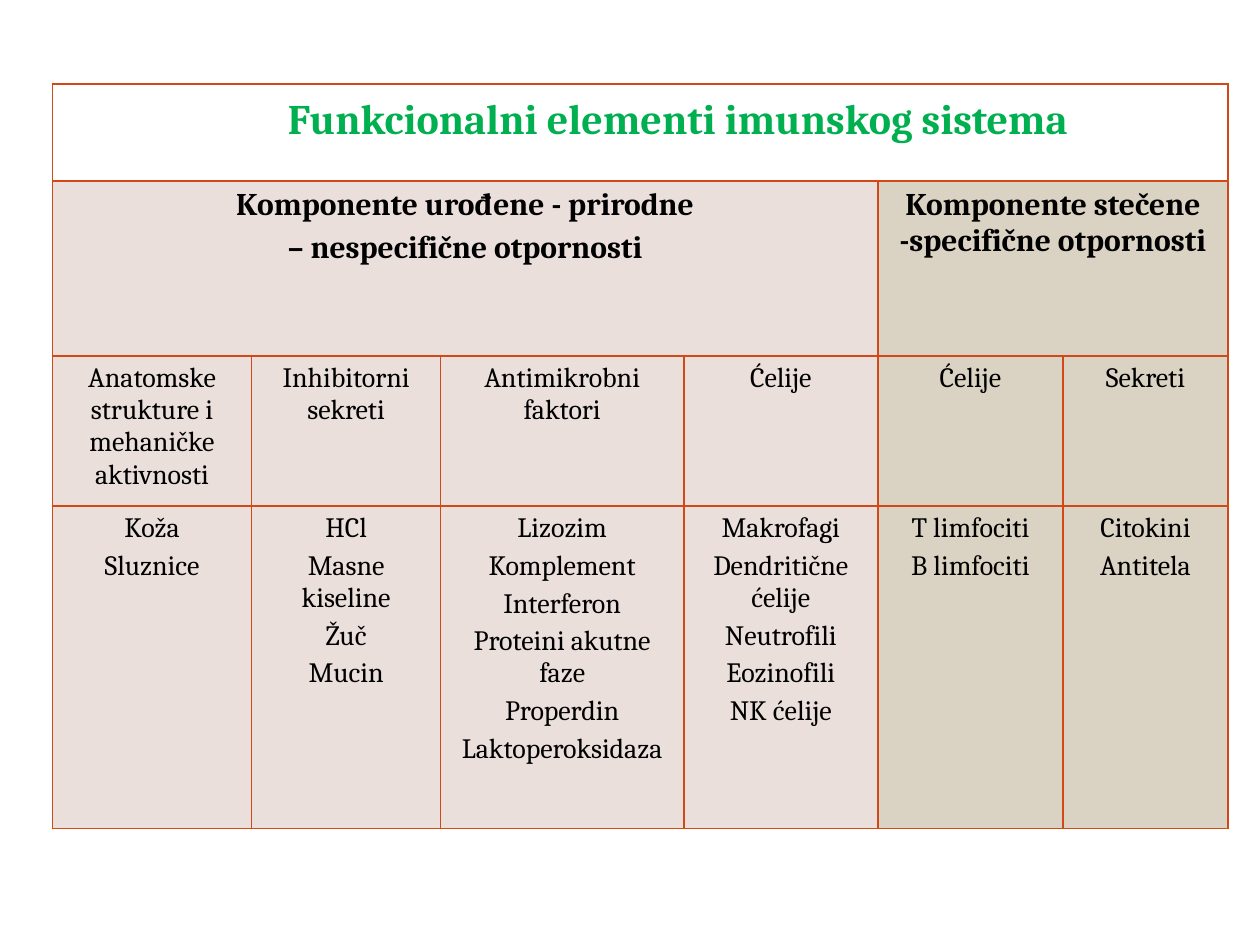
"""Build a slide with a table of the functional elements of the immune system."""
from lxml import etree
from pptx import Presentation
from pptx.dml.color import RGBColor
from pptx.enum import text
from pptx.oxml import ns
from pptx.util import Pt

THEME = {
    "font": "Cambria",
    "title": "00B050", "ink": "000000", "border": "D34817",
    "paper": "FFFFFF", "innate": "EBDFDB", "acquired": "DAD2C3",
    "title_size": 24, "group_size": 18, "body_size": 16,
    "border_width": 1, "spacing": 0.2,
}

TITLE = "Funkcionalni elementi imunskog sistema"
GROUPS = [
    ("innate", ["Komponente urođene - prirodne", "– nespecifične otpornosti"], [
        ("Anatomske strukture i mehaničke aktivnosti", ["Koža", "Sluznice"]),
        ("Inhibitorni sekreti", ["HCl", "Masne kiseline", "Žuč", "Mucin"]),
        ("Antimikrobni faktori", ["Lizozim", "Komplement", "Interferon",
                                  "Proteini akutne faze", "Properdin",
                                  "Laktoperoksidaza"]),
        ("Ćelije", ["Makrofagi", "Dendritične ćelije", "Neutrofili",
                    "Eozinofili", "NK ćelije"]),
    ]),
    ("acquired", ["Komponente stečene -specifične otpornosti"], [
        ("Ćelije", ["T limfociti", "B limfociti"]),
        ("Sekreti", ["Citokini", "Antitela"]),
    ]),
]

LEFT, TOP = 30, 48
COLUMNS = [113.8, 108, 139, 110.9, 105.8, 94.3]
ROWS = [55.4, 100.1, 85.7, 184.3]
TITLE_INDENT, TITLE_TOP = 50, 7.4


def add_borders(cell):
    """Draw the same line on all four sides of a cell."""
    props = cell._tc.get_or_add_tcPr()
    for i, side in enumerate(("a:lnL", "a:lnR", "a:lnT", "a:lnB")):
        line = etree.Element(ns.qn(side), w=str(Pt(THEME["border_width"])))
        fill = etree.SubElement(line, ns.qn("a:solidFill"))
        etree.SubElement(fill, ns.qn("a:srgbClr"), val=THEME["border"])
        props.insert(i, line)


def fill_cell(cell, lines, size, fill, color="ink", bold=False):
    """Write centred paragraphs into a coloured cell."""
    cell.fill.solid()
    cell.fill.fore_color.rgb = RGBColor.from_string(THEME[fill])
    tf = cell.text_frame
    tf.text = "\n".join(lines)
    for p in tf.paragraphs:
        p.alignment = text.PP_ALIGN.CENTER
        p.space_before = Pt(round(THEME[size] * THEME["spacing"], 1))
        p.font.name = THEME["font"]
        p.font.size = Pt(THEME[size])
        p.font.bold = bold
        p.font.color.rgb = RGBColor.from_string(THEME[color])


def main():
    """Create the presentation and save it."""
    prs = Presentation()
    prs.slide_width, prs.slide_height = Pt(720), Pt(540)
    s = prs.slides.add_slide(prs.slide_layouts[6])
    table = s.shapes.add_table(len(ROWS), len(COLUMNS), Pt(LEFT), Pt(TOP),
                               Pt(sum(COLUMNS)), Pt(sum(ROWS))).table
    table.first_row = table.horz_banding = False
    for column, width in zip(table.columns, COLUMNS):
        column.width = Pt(width)
    for row, height in zip(table.rows, ROWS):
        row.height = Pt(height)
    for cell in table.iter_cells():
        add_borders(cell)

    title = table.cell(0, 0)
    title.merge(table.cell(0, len(COLUMNS) - 1))
    title.margin_left, title.margin_top = Pt(TITLE_INDENT), Pt(TITLE_TOP)
    fill_cell(title, [TITLE], "title_size", "paper", "title", True)

    col = 0
    for fill, heading, kinds in GROUPS:
        group = table.cell(1, col)
        group.merge(table.cell(1, col + len(kinds) - 1))
        fill_cell(group, heading, "group_size", fill, bold=True)
        for kind, examples in kinds:
            fill_cell(table.cell(2, col), [kind], "body_size", fill)
            fill_cell(table.cell(3, col), examples, "body_size", fill)
            col += 1
    prs.save("out.pptx")


if __name__ == "__main__":
    main()
